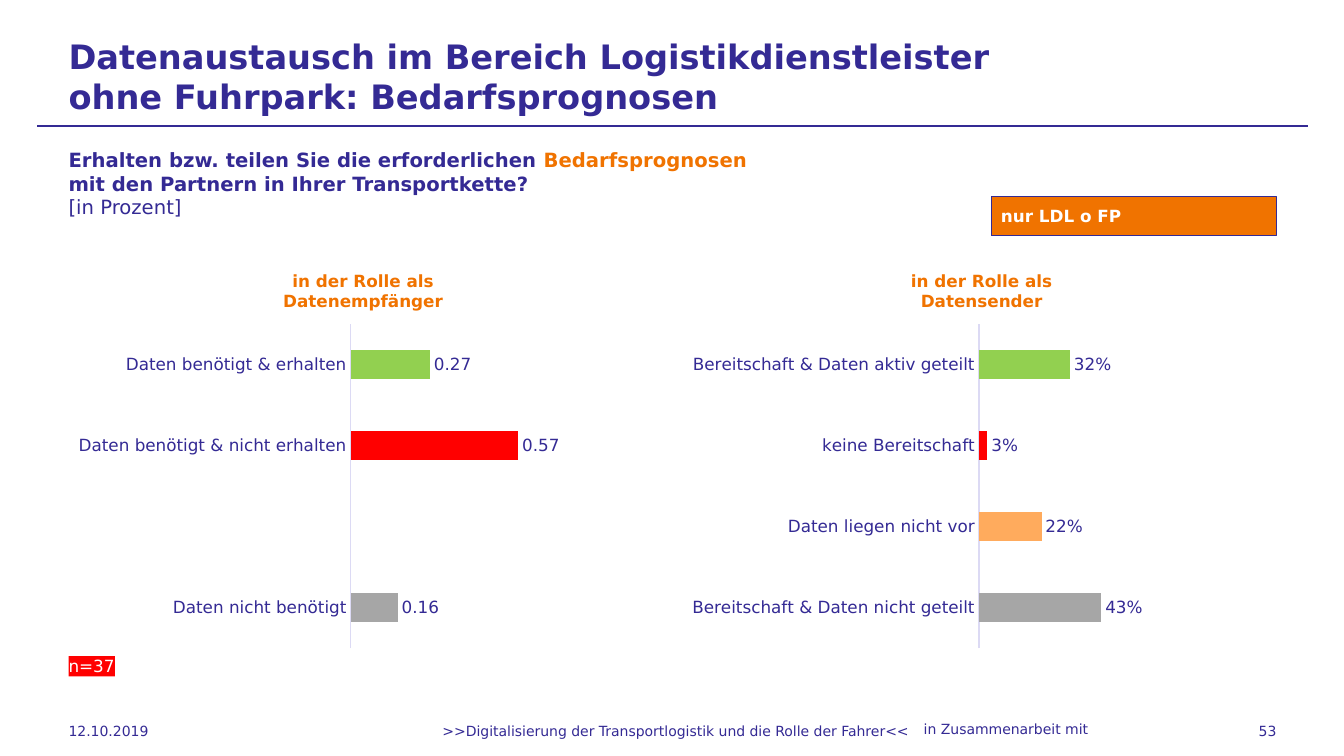
from lxml import etree
from pptx import Presentation
from pptx import util as u
from pptx.chart.data import CategoryChartData
from pptx.dml.color import RGBColor
from pptx.enum import chart as ch, shapes, text
from pptx.oxml import parse_xml
from pptx.oxml.ns import nsdecls, qn

FONT = "DejaVu Sans"
COLORS = {"navy": "342A94", "orange": "F07300", "peach": "FFAB5D", "red": "FF0000",
          "green": "92D050", "gray": "A6A6A6", "axis": "DCDAF4", "white": "FFFFFF"}
COLORS = {name: RGBColor.from_string(value) for name, value in COLORS.items()}
LEFT, CENTER, RIGHT = text.PP_ALIGN.LEFT, text.PP_ALIGN.CENTER, text.PP_ALIGN.RIGHT
TOP, MIDDLE = text.MSO_ANCHOR.TOP, text.MSO_ANCHOR.MIDDLE


def set_font(font, size, color="navy", bold=False):
    values = {"name": FONT, "size": u.Pt(size), "bold": bold}
    for name, value in values.items():
        setattr(font, name, value)
    font.color.rgb = COLORS[color]


def write(sp, lines, size, align=LEFT, anchor=MIDDLE, inset=(0, 0), wrap=True):
    tf = sp.text_frame
    side, edge = (u.Inches(v) for v in inset)
    values = {"word_wrap": wrap, "vertical_anchor": anchor, "margin_left": side,
              "margin_right": side, "margin_top": edge, "margin_bottom": edge}
    for name, value in values.items():
        setattr(tf, name, value)
    p = tf.paragraphs[0]
    p.alignment = align
    for i, line in enumerate(lines):
        if i:
            p.add_line_break()
        for content, color, bold in line:
            r = p.add_run()
            r.text = content
            set_font(r.font, size, color, bold)


prs = Presentation()
prs.slide_width, prs.slide_height = u.Inches(13.33), u.Inches(7.5)
s = prs.slides.add_slide(prs.slide_layouts[6])

rule = s.shapes.add_connector(shapes.MSO_CONNECTOR.STRAIGHT, u.Inches(0.37), u.Inches(1.25),
                              u.Inches(12.97), u.Inches(1.25))
rule.line.color.rgb = COLORS["navy"]
rule.line.width = u.Pt(0.75)
etree.SubElement(rule._element.spPr, qn("a:effectLst"))

title = "Datenaustausch im Bereich Logistikdienstleister ohne Fuhrpark: Bedarfsprognosen"
question = [
    [("Erhalten bzw. teilen Sie die erforderlichen ", "navy", True),
     ("Bedarfsprognosen", "orange", True)],
    [("mit den Partnern in Ihrer Transportkette?", "navy", True)],
    [("[in Prozent]", "navy", False)],
]
footer = ">>Digitalisierung der Transportlogistik und die Rolle der Fahrer<<"
boxes = [
    ((0.68, 0.6, 9.45, 0.31), [[(title, "navy", True)]], 24, LEFT, MIDDLE, (0, 0)),
    ((0.68, 1.47, 10.1, 0.71), question, 14, LEFT, TOP, (0, 0)),
    ((0.68, 7.05, 1.57, 0.4), [[("12.10.2019", "navy", False)]], 10, LEFT, MIDDLE, (0, 0)),
    ((2.41, 7.05, 8.58, 0.4), [[(footer, "navy", False)]], 10, CENTER, MIDDLE, (0, 0)),
    ((8.4, 7.1, 2.49, 0.27), [[("in Zusammenarbeit mit", "navy", False)]], 10, RIGHT, TOP,
     (0.1, 0.05)),
    ((11.16, 7.05, 1.5, 0.4), [[("53", "navy", False)]], 10, RIGHT, MIDDLE, (0, 0)),
]
for place, lines, size, align, anchor, inset in boxes:
    sp = s.shapes.add_textbox(*map(u.Inches, place))
    write(sp, lines, size, align, anchor, inset)

charts = [
    {"place": (6.77, 2.49, 5.88, 4.02), "role": "Datensender", "format": "0%",
     "title": {"x": 0.38, "y": 0.04},
     "plot": {"x": 0.5, "y": 0.18, "w": 0.48, "h": 0.8},
     "bars": [("Bereitschaft & Daten nicht geteilt", 0.43, "gray"),
              ("Daten liegen nicht vor", 0.22, "peach"),
              ("keine Bereitschaft", 0.03, "red"),
              ("Bereitschaft & Daten aktiv geteilt", 0.32, "green")]},
    {"place": (0.68, 2.49, 5.83, 4.02), "role": "Datenempfänger", "format": "General",
     "title": {"x": 0.36, "y": 0.04},
     "plot": {"x": 0.48, "y": 0.18, "w": 0.5, "h": 0.8},
     "bars": [("Daten nicht benötigt", 0.16, "gray"),
              ("", None, None),
              ("Daten benötigt & nicht erhalten", 0.57, "red"),
              ("Daten benötigt & erhalten", 0.27, "green")]},
]
for item in charts:
    data = CategoryChartData(number_format=item["format"])
    data.categories = [label for label, value, color in item["bars"]]
    data.add_series("Series 1", [value for label, value, color in item["bars"]])
    chart = s.shapes.add_chart(ch.XL_CHART_TYPE.BAR_CLUSTERED,
                               *map(u.Inches, item["place"]), data).chart
    set_font(chart.font, 10)
    chart.has_legend = False
    chart.has_title = True
    tf = chart.chart_title.text_frame
    tf.text = "in der Rolle als\n" + item["role"]
    for p in tf.paragraphs:
        set_font(p.runs[0].font, 12, "orange", True)
    chart.chart_title.include_in_layout = False

    cat = chart.category_axis
    cat.major_tick_mark = ch.XL_TICK_MARK.NONE
    cat.format.line.color.rgb = COLORS["axis"]
    cat.format.line.width = u.Pt(0.75)
    set_font(cat.tick_labels.font, 12)
    val = chart.value_axis
    for name, value in {"visible": False, "has_major_gridlines": False,
                        "minimum_scale": 0, "maximum_scale": 1}.items():
        setattr(val, name, value)

    plot = chart.plots[0]
    plot.gap_width = 182
    plot.vary_by_categories = False
    plot.has_data_labels = True
    labels = plot.data_labels
    for name, value in {"show_value": True, "position": ch.XL_LABEL_POSITION.OUTSIDE_END,
                        "number_format": item["format"],
                        "number_format_is_linked": False}.items():
        setattr(labels, name, value)
    set_font(labels.font, 12)
    series = plot.series[0]
    for i, (label, value, color) in enumerate(item["bars"]):
        if color:
            fill = series.points[i].format.fill
            fill.solid()
            fill.fore_color.rgb = COLORS[color]

    plot_area = chart._chartSpace.chart.plotArea
    for parent, key, index in ((plot_area, "plot", 0), (chart.chart_title._element, "title", 1)):
        for old in parent.findall(qn("c:layout")):
            parent.remove(old)
        target = '<c:layoutTarget val="inner"/>' if key == "plot" else ""
        modes = "".join(f'<c:{k}Mode val="edge"/>' for k in "xy")
        sizes = "".join(f'<c:{k} val="{v}"/>' for k, v in item[key].items())
        parent.insert(index, parse_xml(
            f'<c:layout {nsdecls("c")}><c:manualLayout>{target}{modes}{sizes}'
            '</c:manualLayout></c:layout>'))

tags = [
    ((9.83, 1.95, 2.83, 0.39), "nur LDL o FP", "orange", "navy", True, (0.1, 0.05), MIDDLE),
    ((0.68, 6.51, 0.46, 0.2), "n=37", "red", None, False, (0, 0), TOP),
]
for place, label, fill, line, bold, inset, anchor in tags:
    sp = s.shapes.add_shape(shapes.MSO_SHAPE.RECTANGLE, *map(u.Inches, place))
    sp.shadow.inherit = False
    sp.fill.solid()
    sp.fill.fore_color.rgb = COLORS[fill]
    if line:
        sp.line.color.rgb = COLORS[line]
        sp.line.width = u.Pt(0.75)
    else:
        sp.line.fill.background()
    write(sp, [[(label, "white", bold)]], 12, LEFT, anchor, inset, wrap=bool(line))

prs.save("out.pptx")
